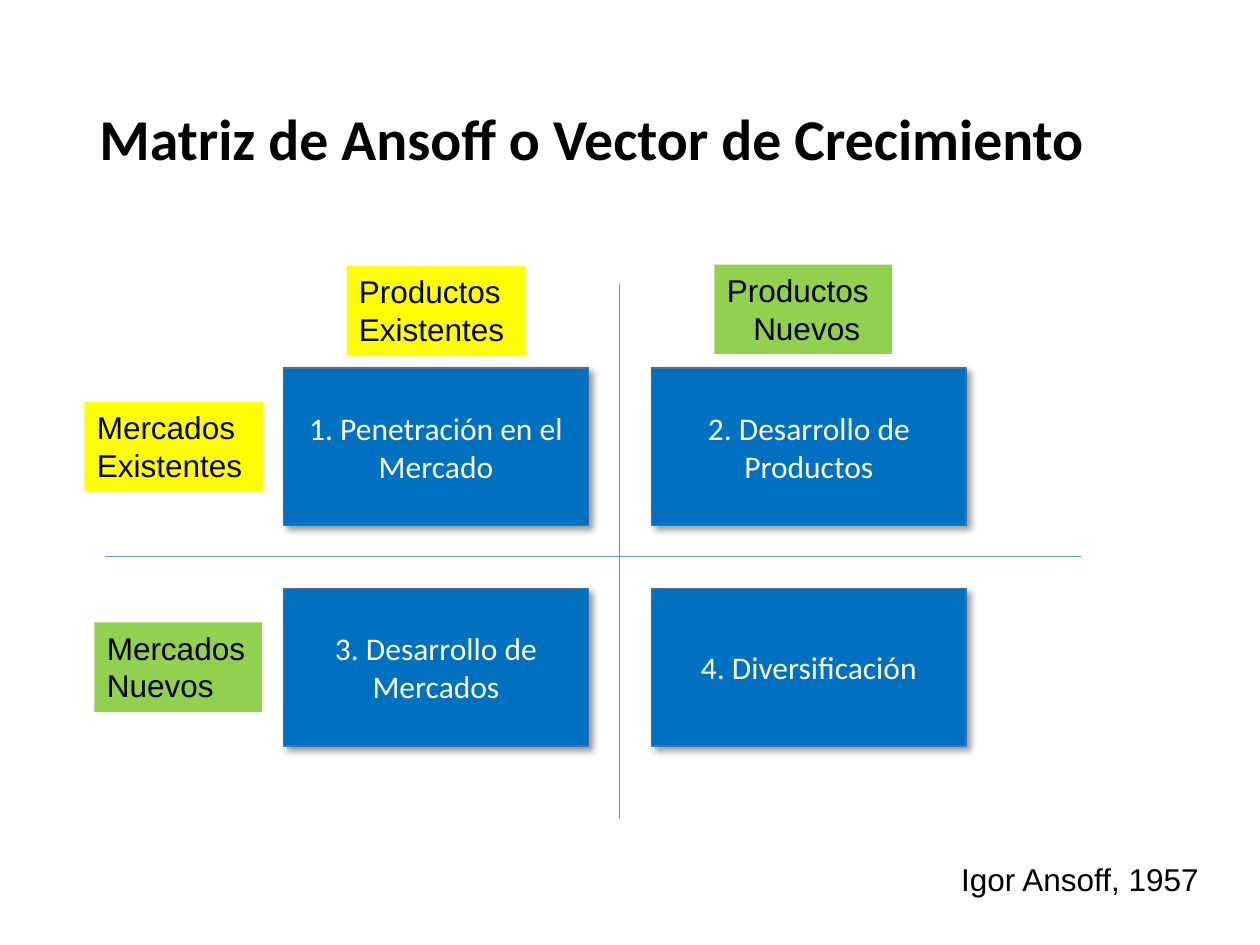
"""Build the Ansoff matrix slide: four growth strategies by market and product."""
from lxml import etree
from pptx import Presentation
from pptx.dml.color import RGBColor
from pptx.enum import shapes, text
from pptx.oxml import ns
from pptx.util import Inches, Pt

BLACK = RGBColor(0x00, 0x00, 0x00)
WHITE = RGBColor(0xFF, 0xFF, 0xFF)
BLUE = RGBColor(0x00, 0x70, 0xC0)
BORDER = RGBColor(0x43, 0x73, 0x9E)
AXIS = RGBColor(0x5B, 0x9B, 0xD5)
YELLOW = RGBColor(0xFF, 0xFF, 0x00)
GREEN = RGBColor(0x92, 0xD0, 0x50)

COLUMNS = [(2.25, 2.42), (5.17, 2.5)]
ROWS = [2.92, 4.67]
STRATEGY_HEIGHT = 1.25
STRATEGIES = [
    ["1. Penetración en el Mercado", "2. Desarrollo de Productos"],
    ["3. Desarrollo de Mercados", "4. Diversificación"],
]
LABELS = [
    (["Mercados", "Existentes"], 0.67, 3.19, 1.42, YELLOW, 0),
    (["Mercados", "Nuevos"], 0.75, 4.94, 1.33, GREEN, 0),
    (["Productos", "Existentes"], 2.75, 2.11, 1.42, YELLOW, 0),
    (["Productos", "Nuevos"], 5.67, 2.1, 1.41, GREEN, 0.21),
]


def write(shape, lines, size, font, color, align, anchor, bold=False):
    frame = shape.text_frame
    frame.word_wrap = True
    frame.vertical_anchor = anchor
    frame.text = "\n".join(lines)
    for paragraph in frame.paragraphs:
        paragraph.alignment = align
        paragraph.font.size = Pt(size)
        paragraph.font.name = font
        paragraph.font.color.rgb = color
        paragraph.font.bold = bold
    return frame


def add_box(slide, left, top, width, height, fill):
    box = slide.shapes.add_shape(
        shapes.MSO_SHAPE.RECTANGLE,
        Inches(left), Inches(top), Inches(width), Inches(height))
    box.shadow.inherit = False
    box.fill.solid()
    box.fill.fore_color.rgb = fill
    box.line.fill.background()
    return box


def add_shadow(box):
    effects = box._element.spPr.find(ns.qn("a:effectLst"))
    shadow = etree.SubElement(
        effects, ns.qn("a:outerShdw"), blurRad=str(Pt(4)), dist=str(Pt(3)),
        dir="2700000", algn="tl", rotWithShape="0")
    color = etree.SubElement(shadow, ns.qn("a:srgbClr"), val="000000")
    etree.SubElement(color, ns.qn("a:alpha"), val="40000")


def add_strategy(slide, name, left, top, width):
    strategy = add_box(slide, left, top, width, STRATEGY_HEIGHT, BLUE)
    strategy.line.color.rgb = BORDER
    strategy.line.width = Pt(1)
    add_shadow(strategy)
    write(strategy, [name], 18, "Calibri", WHITE,
          text.PP_ALIGN.CENTER, text.MSO_ANCHOR.MIDDLE)


def add_label(slide, lines, left, top, width, fill, indent):
    label = add_box(slide, left, top, width, 0.71, fill)
    frame = write(label, lines, 18, "Arial", BLACK,
                  text.PP_ALIGN.LEFT, text.MSO_ANCHOR.TOP)
    if indent:
        properties = frame.paragraphs[-1]._p.get_or_add_pPr()
        properties.set("marL", str(Inches(indent)))


def add_axis(slide, x1, y1, x2, y2):
    axis = slide.shapes.add_connector(
        shapes.MSO_CONNECTOR.STRAIGHT,
        Inches(x1), Inches(y1), Inches(x2), Inches(y2))
    axis.line.color.rgb = AXIS
    axis.line.width = Pt(0.5)
    etree.SubElement(axis._element.spPr, ns.qn("a:effectLst"))


def add_text(slide, words, left, top, width, height, size, font, anchor, bold=False):
    box = slide.shapes.add_textbox(
        Inches(left), Inches(top), Inches(width), Inches(height))
    return write(box, [words], size, font, BLACK, text.PP_ALIGN.LEFT, anchor, bold)


def main():
    deck = Presentation()
    deck.slide_width, deck.slide_height = Inches(10), Inches(7.5)
    slide = deck.slides.add_slide(deck.slide_layouts[6])

    title = add_text(slide, "Matriz de Ansoff o Vector de Crecimiento",
                     0.69, 0.4, 8.62, 1.45, 33, "Calibri",
                     text.MSO_ANCHOR.MIDDLE, bold=True)
    title.paragraphs[0].line_spacing = 0.9

    for top, names in zip(ROWS, STRATEGIES):
        for (left, width), name in zip(COLUMNS, names):
            add_strategy(slide, name, left, top, width)
    for label in LABELS:
        add_label(slide, *label)

    add_axis(slide, 0.83, 4.42, 8.58, 4.42)
    add_axis(slide, 4.92, 2.25, 4.92, 6.5)

    author = add_text(slide, "Igor Ansoff, 1957", 7.53, 6.78, 2.1, 0.4,
                      18, "Arial", text.MSO_ANCHOR.TOP)
    author.word_wrap = False
    deck.save("out.pptx")


if __name__ == "__main__":
    main()
